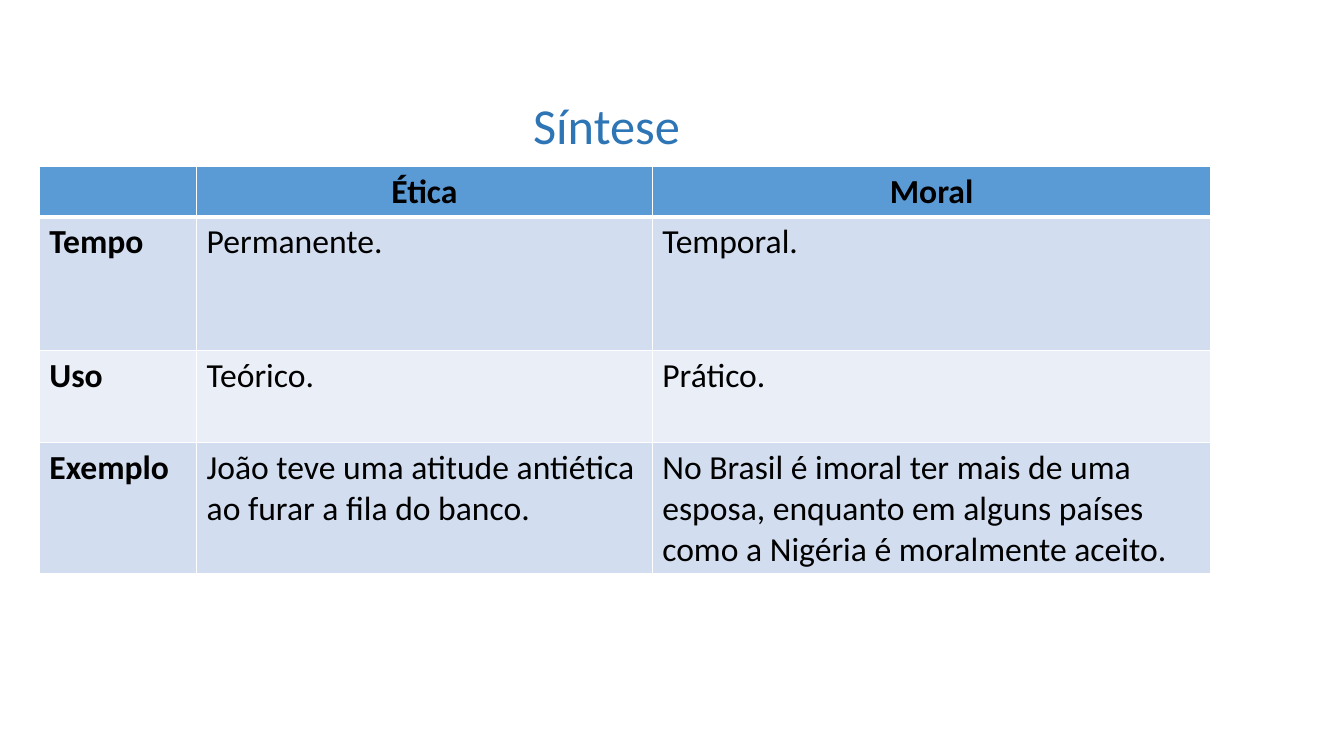
"""Builds a slide that sums up ethics and morals in a table."""
from dataclasses import dataclass

from lxml.etree import SubElement
from pptx import Presentation
from pptx.dml.color import RGBColor
from pptx.enum.text import MSO_ANCHOR, PP_ALIGN
from pptx.oxml.ns import qn
from pptx.util import Inches, Pt


@dataclass(frozen=True)
class Theme:
    font: str = "Calibri"
    title_size: int = 36
    table_size: int = 24
    title: str = "2E75B6"
    text: str = "000000"
    border: str = "FFFFFF"
    header: str = "5B9BD5"
    bands: tuple = ("D2DEEF", "EAEFF7")
    thin: int = 1
    thick: int = 3


THEME = Theme()
COLUMN_WIDTHS = (1.56, 4.52, 5.54)
ROW_HEIGHTS = (0.49, 1.33, 0.91, 1.3)
ROWS = (
    ("", "Ética", "Moral"),
    ("Tempo", "Permanente.", "Temporal."),
    ("Uso", "Teórico.", "Prático."),
    (
        "Exemplo",
        "João teve uma atitude antiética ao furar a fila do banco.",
        "No Brasil é imoral ter mais de uma esposa, enquanto em alguns países "
        "como a Nigéria é moralmente aceito.",
    ),
)


def write_text(frame, text, size, color, bold=False, align=PP_ALIGN.LEFT):
    paragraph = frame.paragraphs[0]
    paragraph.text = text
    paragraph.alignment = align
    formats = {"name": THEME.font, "size": Pt(size), "bold": bold}
    for name, value in formats.items():
        setattr(paragraph.font, name, value)
    paragraph.font.color.rgb = RGBColor.from_string(color)


def add_title(slide, text, left, top, width, height):
    box = slide.shapes.add_textbox(
        Inches(left), Inches(top), Inches(width), Inches(height)
    )
    formats = {
        "word_wrap": True,
        "vertical_anchor": MSO_ANCHOR.BOTTOM,
        "margin_left": Inches(0.22),
    }
    for name, value in formats.items():
        setattr(box.text_frame, name, value)
    write_text(
        box.text_frame, text, THEME.title_size, THEME.title, align=PP_ALIGN.CENTER
    )


def add_borders(cell, widths):
    properties = cell._tc.get_or_add_tcPr()
    for side, width in widths.items():
        line = SubElement(properties, qn(f"a:ln{side}"), w=str(Pt(width)))
        fill = SubElement(line, qn("a:solidFill"))
        SubElement(fill, qn("a:srgbClr"), val=THEME.border)


def format_cell(cell, text, row, column):
    is_header = row == 0
    widths = dict.fromkeys("LRTB", THEME.thin)
    if is_header:
        widths["B"] = THEME.thick
    elif row == 1:
        widths["T"] = THEME.thick
    add_borders(cell, widths)
    fill = THEME.header if is_header else THEME.bands[(row - 1) % 2]
    cell.fill.solid()
    cell.fill.fore_color.rgb = RGBColor.from_string(fill)
    align = PP_ALIGN.LEFT
    if is_header:
        align = PP_ALIGN.CENTER
    elif row == 1 and column > 0:
        align = PP_ALIGN.JUSTIFY
    bold = is_header or column == 0
    write_text(cell.text_frame, text, THEME.table_size, THEME.text, bold, align)


def add_comparison_table(slide, left, top):
    table = slide.shapes.add_table(
        len(ROWS), len(COLUMN_WIDTHS), Inches(left), Inches(top),
        Inches(sum(COLUMN_WIDTHS)), Inches(sum(ROW_HEIGHTS)),
    ).table
    for column, width in zip(table.columns, COLUMN_WIDTHS):
        column.width = Inches(width)
    for row, height in zip(table.rows, ROW_HEIGHTS):
        row.height = Inches(height)
    for row, texts in enumerate(ROWS):
        for column, text in enumerate(texts):
            format_cell(table.cell(row, column), text, row, column)


def main():
    presentation = Presentation()
    presentation.slide_width = Inches(13.33)
    presentation.slide_height = Inches(7.5)
    slide = presentation.slides.add_slide(presentation.slide_layouts[6])
    add_title(slide, "Síntese", 0.62, 0.81, 10.67, 0.77)
    add_comparison_table(slide, 0.39, 1.65)
    presentation.save("out.pptx")


if __name__ == "__main__":
    main()
